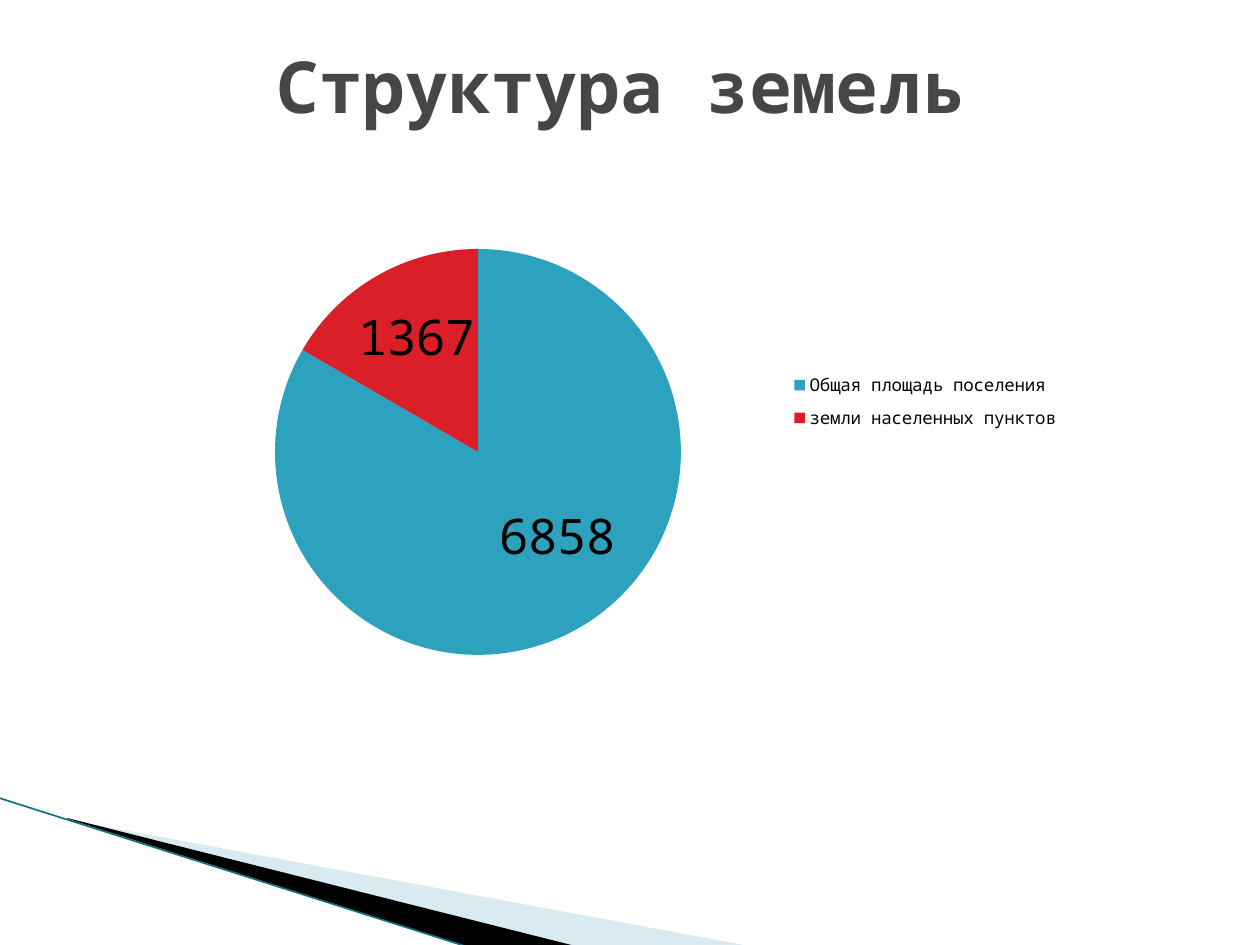
from typing import NamedTuple

from lxml.etree import SubElement
from pptx import Presentation
from pptx.chart.data import CategoryChartData as ChartData
from pptx.dml.color import RGBColor
from pptx.enum.chart import XL_CHART_TYPE as Kind
from pptx.enum.chart import XL_LABEL_POSITION as Spot
from pptx.enum.chart import XL_LEGEND_POSITION as Side
from pptx.enum.shapes import MSO_CONNECTOR as Link
from pptx.enum.text import MSO_ANCHOR as Anchor
from pptx.enum.text import PP_ALIGN as Align
from pptx.oxml import parse_xml
from pptx.oxml.ns import nsdecls, qn
from pptx.util import Emu, Pt

SCALE = 914400 / 126
FONT = "Noto Sans Mono"
BLACK = RGBColor(0x00, 0x00, 0x00)
GREY = RGBColor(0x46, 0x46, 0x46)
PALE = RGBColor(0xA0, 0xCB, 0xDC)
TEAL = RGBColor(0x13, 0x70, 0x80)
BLUE = RGBColor(0x2D, 0xA2, 0xBF)
RED = RGBColor(0xDA, 0x1F, 0x28)


class Box(NamedTuple):
    left: int
    top: int
    width: int
    height: int


class Wedge(NamedTuple):
    box: Box
    dots: list[tuple[int, int]]
    color: RGBColor
    alpha: int


class Slice(NamedTuple):
    name: str
    value: int
    color: RGBColor
    shift: tuple[int, int]  # label offset from the middle of the slice


WEDGES = [
    Wedge(
        Box(98, 689, 524, 199),
        [(69, 820), (749, 946), (574, 946), (69, 819)],
        PALE,
        40,
    ),
    Wedge(
        Box(-8, 798, 524, 116),
        [(67, 818), (575, 946), (469, 947), (68, 819)],
        BLACK,
        100,
    ),
]
SLICES = [
    Slice("Общая площадь поселения", 6858, BLUE, (29, -4)),
    Slice("земли населенных пунктов", 1367, RED, (-11, -28)),
]
TITLE = Box(54, 6, 1134, 158)
CHART = Box(164, 175, 912, 556)
PIE = Box(275, 249, 406, 406)
LEGEND = Box(788, 364, 274, 75)


def px(size: int) -> Emu:
    return Emu(round(size * SCALE))


def set_frame(shape, wedge: Wedge) -> None:
    """Give the wedge its own frame, which its outline may leave."""
    box = wedge.box
    shape.left, shape.top, shape.width, shape.height = map(px, box)
    trace = shape._element.find(".//" + qn("a:path"))
    trace.set("w", str(box.width))
    trace.set("h", str(box.height))
    for dot, (x, y) in zip(trace.iter(qn("a:pt")), wedge.dots):
        dot.set("x", str(x - box.left))
        dot.set("y", str(y - box.top))


def draw_wedge(slide, wedge: Wedge) -> None:
    pen = slide.shapes.build_freeform(*wedge.dots[0], scale=SCALE)
    pen.add_line_segments(wedge.dots[1:], close=True)
    shape = pen.convert_to_shape()
    set_frame(shape, wedge)
    shape.shadow.inherit = False
    shape.line.fill.background()
    shape.fill.solid()
    shape.fill.fore_color.rgb = wedge.color
    if wedge.alpha < 100:
        tint = shape.fill._xPr.find(".//" + qn("a:srgbClr"))
        SubElement(tint, qn("a:alpha"), val=str(wedge.alpha * 1000))


def draw_edge(slide) -> None:
    ends = [px(n) for n in (-1, 798, 468, 947)]
    edge = slide.shapes.add_connector(Link.STRAIGHT, *ends)
    edge.line.color.rgb = TEAL
    edge.line.width = Pt(0.95)
    SubElement(edge._element.spPr, qn("a:effectLst"))


def draw_title(slide, text: str) -> None:
    frame = slide.shapes.add_textbox(*map(px, TITLE)).text_frame
    frame.word_wrap = True
    frame.vertical_anchor = Anchor.MIDDLE
    para = frame.paragraphs[0]
    para.alignment = Align.CENTER
    run = para.add_run()
    run.text = text
    font = run.font
    font.name, font.size, font.bold = FONT, Pt(41), True
    font.color.rgb = GREY


def layout(modes: str, **parts: float):
    """Manual chart layout, in fractions of the chart's size."""
    rows = "".join(f'<c:{k} val="{v:.4f}"/>' for k, v in parts.items())
    return parse_xml(
        f'<c:layout {nsdecls("c")}><c:manualLayout>{modes}{rows}'
        "</c:manualLayout></c:layout>"
    )


def place(box: Box, inner: bool = False):
    """Layout of a part that sits at box on the slide."""
    modes = '<c:layoutTarget val="inner"/>' if inner else ""
    modes += '<c:xMode val="edge"/><c:yMode val="edge"/>'
    return layout(
        modes,
        x=(box.left - CHART.left) / CHART.width,
        y=(box.top - CHART.top) / CHART.height,
        w=box.width / CHART.width,
        h=box.height / CHART.height,
    )


def set_layout(part, after: str, new) -> None:
    for old in part.findall(qn("c:layout")):
        part.remove(old)
    if after:
        part.find(qn(after)).addnext(new)
    else:
        part.insert(0, new)


def set_font(font, size: int) -> None:
    font.name, font.size = FONT, Pt(size)
    font.color.rgb = BLACK


def draw_pie(slide) -> None:
    data = ChartData()
    data.categories = [s.name for s in SLICES]
    data.add_series("Series 1", [s.value for s in SLICES])
    frame = slide.shapes.add_chart(Kind.PIE, *map(px, CHART), data)
    chart = frame.chart
    chart.has_title = False
    set_font(chart.font, 10)
    chart.has_legend = True
    chart.legend.position = Side.RIGHT
    chart.legend.include_in_layout = False
    set_font(chart.legend.font, 10)
    set_layout(chart.legend._element, "c:legendPos", place(LEGEND))
    area = chart._chartSpace.chart.plotArea
    set_layout(area, "", place(PIE, inner=True))

    plot = chart.plots[0]
    plot.vary_by_categories = True
    plot.has_data_labels = True
    plot.data_labels.show_value = True
    plot.data_labels.show_percentage = False
    row = plot.series[0]
    for i, item in enumerate(SLICES):
        point = row.points[i]
        point.format.fill.solid()
        point.format.fill.fore_color.rgb = item.color
        point.format.line.fill.background()
        label = point.data_label
        set_font(label.font, 28)
        label.position = Spot.CENTER
        x, y = item.shift
        move = layout("", x=x / CHART.width, y=y / CHART.height)
        tag = row._element.findall(".//" + qn("c:dLbl"))[i]
        set_layout(tag, "c:idx", move)


def main() -> None:
    deck = Presentation()
    deck.slide_width, deck.slide_height = px(1260), px(945)
    slide = deck.slides.add_slide(deck.slide_layouts[6])
    for wedge in WEDGES:
        draw_wedge(slide, wedge)
    draw_edge(slide)
    draw_title(slide, "Структура земель")
    draw_pie(slide)
    deck.save("out.pptx")


if __name__ == "__main__":
    main()
